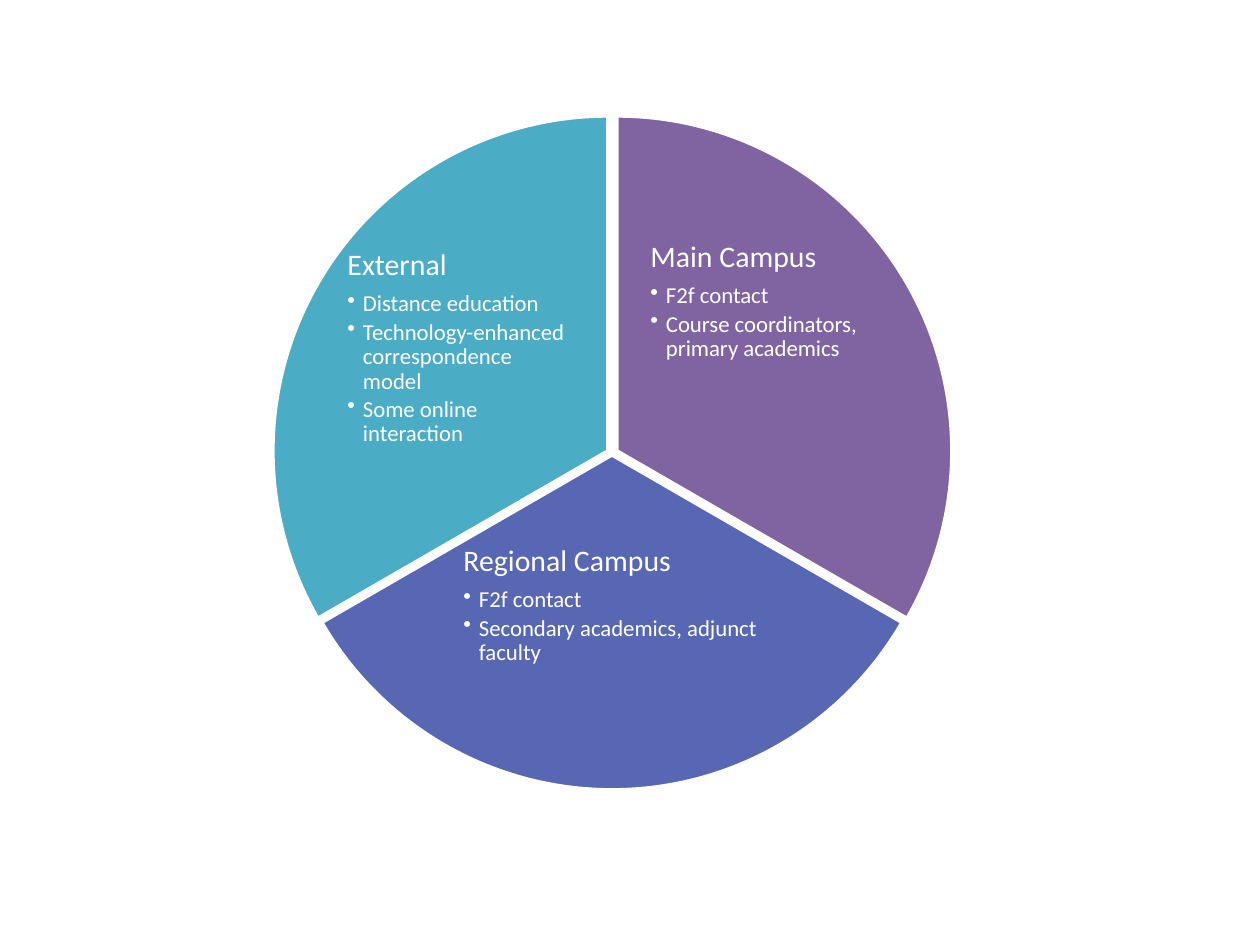
from lxml import etree
from pptx import Presentation, util as u
from pptx.dml.color import RGBColor
from pptx.enum import shapes, text
from pptx.oxml.ns import qn

PX = u.Inches(1) / 126
DIAMETER = 670
INDENT = 15.5
COLORS = {"main": "8064A2", "regional": "5767B4", "external": "4BACC6", "white": "FFFFFF"}

# Pie origin, start and end angle, text box within the pie box, title, bullets
SECTORS = [
    ("main", (282, 116), (270, 30), (366, 123, 228, 223), "Main Campus",
     ["F2f contact", "Course coordinators, primary academics"]),
    ("regional", (277, 120), (30, 150), (184, 423, 304, 208), "Regional Campus",
     ["F2f contact", "Secondary academics, adjunct faculty"]),
    ("external", (273, 116), (150, 270), (72, 131, 228, 223), "External",
     ["Distance education", "Technology-enhanced correspondence model",
      "Some online interaction"]),
]


def px(*lengths):
    return [u.Emu(round(length * PX)) for length in lengths]


def color(name):
    return RGBColor.from_string(COLORS[name])


def style_paragraph(para, size, space_after):
    para.alignment = text.PP_ALIGN.LEFT
    para.line_spacing = 0.9
    para.space_after = u.Pt(space_after)
    for span in para.runs:
        span.font.name = "Calibri"
        span.font.size = u.Pt(size)
        span.font.color.rgb = color("white")


def add_bullet(para):
    para.level = 1
    properties = para._p.get_or_add_pPr()
    indent = px(INDENT)[0]
    properties.set("marL", str(indent))
    properties.set("indent", str(-indent))
    etree.SubElement(properties, qn("a:buChar")).set("char", "•")


def add_label(group, box, title, bullets):
    frame = group.shapes.add_textbox(*px(*box)).text_frame
    frame.word_wrap = True
    frame.vertical_anchor = text.MSO_ANCHOR.TOP
    frame.margin_left = frame.margin_top = u.Inches(0.02)
    frame.margin_right = frame.margin_bottom = u.Inches(0.02)
    frame.text = "\n".join([title, *bullets])
    heading, *items = frame.paragraphs
    style_paragraph(heading, 17, 6)
    for para in items:
        style_paragraph(para, 13, 2)
        add_bullet(para)


def add_sector(group, name, origin, angles, label, title, bullets):
    left, top = origin
    pie = group.shapes.add_shape(shapes.MSO_SHAPE.PIE, *px(left, top, DIAMETER, DIAMETER))
    pie.shadow.inherit = False
    for index, angle in enumerate(angles):
        pie.adjustments[index] = angle * 0.6  # 60000 units per degree, scaled by 100000
    pie.fill.solid()
    pie.fill.fore_color.rgb = color(name)
    pie.line.color.rgb = color("white")
    pie.line.width = u.Pt(2)
    x, y, width, height = label
    add_label(group, (left + x, top + y, width, height), title, bullets)


def main():
    deck = Presentation()
    deck.slide_width, deck.slide_height = u.Inches(10), u.Inches(7.5)
    page = deck.slides.add_slide(deck.slide_layouts[6])
    group = page.shapes.add_group_shape()
    for sector in SECTORS:
        add_sector(group, *sector)
    deck.save("out.pptx")


if __name__ == "__main__":
    main()
